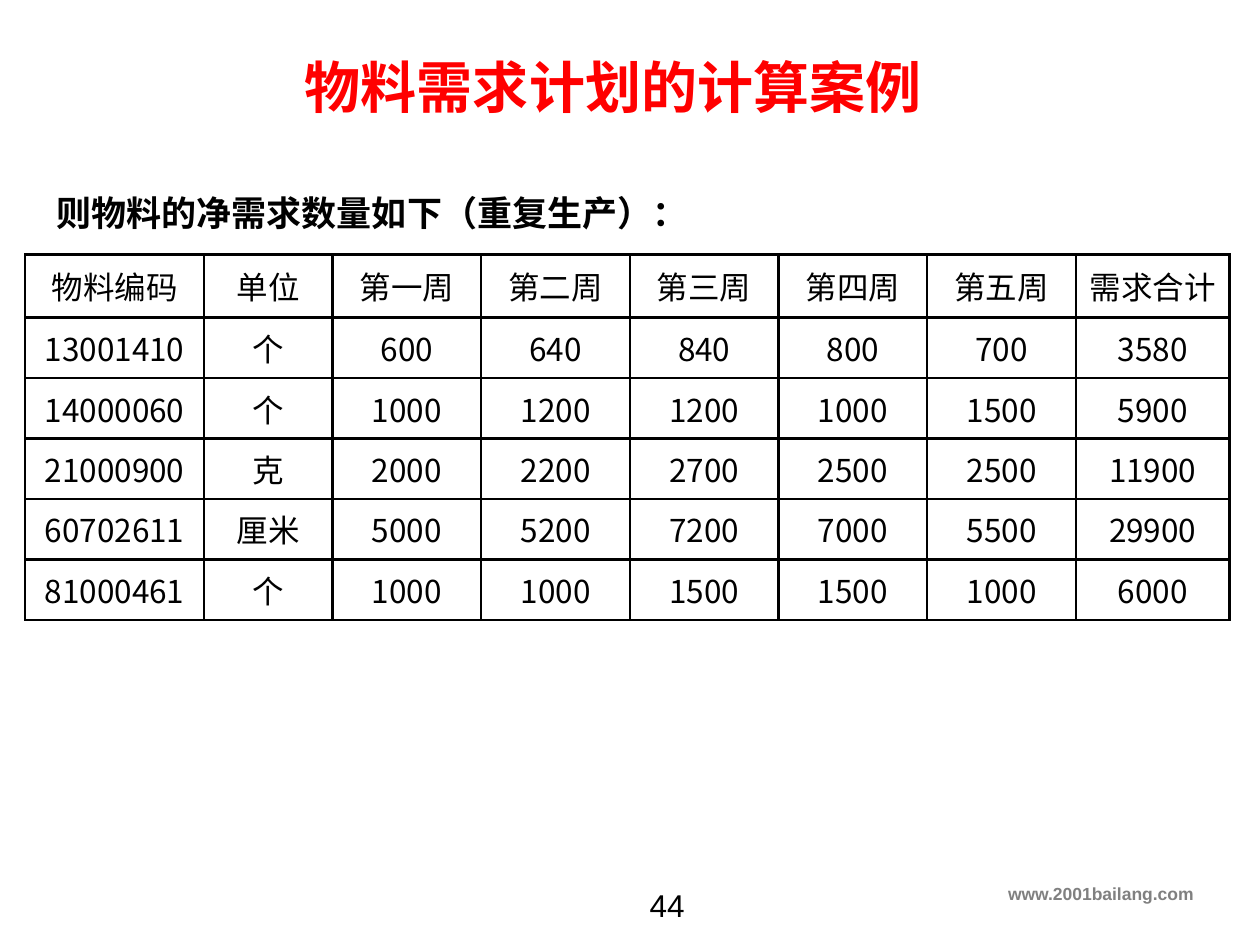
from lxml.etree import SubElement
from pptx import Presentation
from pptx.dml.color import RGBColor
from pptx.enum.text import MSO_ANCHOR, PP_ALIGN
from pptx.oxml.ns import qn
from pptx.util import Inches, Pt

BLACK = RGBColor(0x00, 0x00, 0x00)
WHITE = RGBColor(0xFF, 0xFF, 0xFF)
RED = RGBColor(0xFF, 0x00, 0x00)
GRAY = RGBColor(0x80, 0x80, 0x80)
CHINESE_FONT = "Noto Sans CJK SC"
LATIN_FONT = "Arial"

COLUMN_WIDTHS = [1.42, 1.02] + [1.18] * 5 + [1.22]
ROW_HEIGHTS = [0.5] + [0.48] * 5
REQUIREMENTS = [
    ["物料编码", "单位", "第一周", "第二周", "第三周", "第四周", "第五周", "需求合计"],
    ["13001410", "个", "600", "640", "840", "800", "700", "3580"],
    ["14000060", "个", "1000", "1200", "1200", "1000", "1500", "5900"],
    ["21000900", "克", "2000", "2200", "2700", "2500", "2500", "11900"],
    ["60702611", "厘米", "5000", "5200", "7200", "7000", "5500", "29900"],
    ["81000461", "个", "1000", "1000", "1500", "1500", "1000", "6000"],
]


class SlideBuilder:
    def __init__(self, slide, font=CHINESE_FONT, border_width=Pt(1.5)):
        self.slide = slide
        self.font = font
        self.border_width = border_width

    def set_text(self, text_frame, text, size, color=BLACK, bold=False,
                 align=PP_ALIGN.LEFT, font=None):
        text_frame.text = text
        paragraph = text_frame.paragraphs[0]
        paragraph.alignment = align
        paragraph.font.size = Pt(size)
        paragraph.font.bold = bold
        paragraph.font.color.rgb = color
        paragraph.font.name = font or self.font
        # East Asian glyphs take their typeface from a separate element.
        properties = paragraph._p.pPr.find(qn("a:defRPr"))
        SubElement(properties, qn("a:ea"), typeface=font or self.font)

    def title(self, text, left, top, width, height, size, color):
        title = self.slide.shapes.title
        title.left, title.top = Inches(left), Inches(top)
        title.width, title.height = Inches(width), Inches(height)
        title.text_frame.word_wrap = False
        title.text_frame.vertical_anchor = MSO_ANCHOR.MIDDLE
        self.set_text(title.text_frame, text, size, color, bold=True)

    def text(self, text, left, top, width, height, size, wrap=True, **style):
        box = self.slide.shapes.add_textbox(
            Inches(left), Inches(top), Inches(width), Inches(height))
        box.text_frame.word_wrap = wrap
        self.set_text(box.text_frame, text, size, **style)

    def table(self, rows, left, top, column_widths, row_heights, size):
        frame = self.slide.shapes.add_table(
            len(rows), len(column_widths), Inches(left), Inches(top),
            Inches(sum(column_widths)), Inches(sum(row_heights)))
        table = frame.table
        table.first_row = table.horz_banding = False
        for column, width in zip(table.columns, column_widths):
            column.width = Inches(width)
        for row, height, values in zip(table.rows, row_heights, rows):
            row.height = Inches(height)
            for cell, value in zip(row.cells, values):
                self.set_text(cell.text_frame, value, size, align=PP_ALIGN.CENTER)
                cell.vertical_anchor = MSO_ANCHOR.MIDDLE
                self.border(cell)
                cell.fill.solid()
                cell.fill.fore_color.rgb = WHITE

    def border(self, cell):
        properties = cell._tc.get_or_add_tcPr()
        for side in ("a:lnL", "a:lnR", "a:lnT", "a:lnB"):
            line = SubElement(properties, qn(side), w=str(self.border_width))
            fill = SubElement(line, qn("a:solidFill"))
            SubElement(fill, qn("a:srgbClr"), val=str(BLACK))


def main():
    presentation = Presentation()
    presentation.slide_width = Inches(10)
    presentation.slide_height = Inches(7.5)
    title_only = presentation.slide_layouts[5]
    builder = SlideBuilder(presentation.slides.add_slide(title_only))

    builder.text("www.2001bailang.com", 0, 6.96, 9.57, 0.35, 10, color=GRAY,
                 bold=True, align=PP_ALIGN.RIGHT, font=LATIN_FONT)
    builder.text("则物料的净需求数量如下（重复生产）：", 0.35, 1.47, 5.25, 0.44, 20,
                 wrap=False, bold=True)
    builder.table(REQUIREMENTS, 0.2, 2.02, COLUMN_WIDTHS, ROW_HEIGHTS, 18)
    builder.title("物料需求计划的计算案例", 2.32, 0.36, 5.14, 0.64, 32, RED)
    builder.text("44", 4.13, 6.98, 2.33, 0.4, 18,
                 align=PP_ALIGN.CENTER, font=LATIN_FONT)

    presentation.save("out.pptx")


if __name__ == "__main__":
    main()
